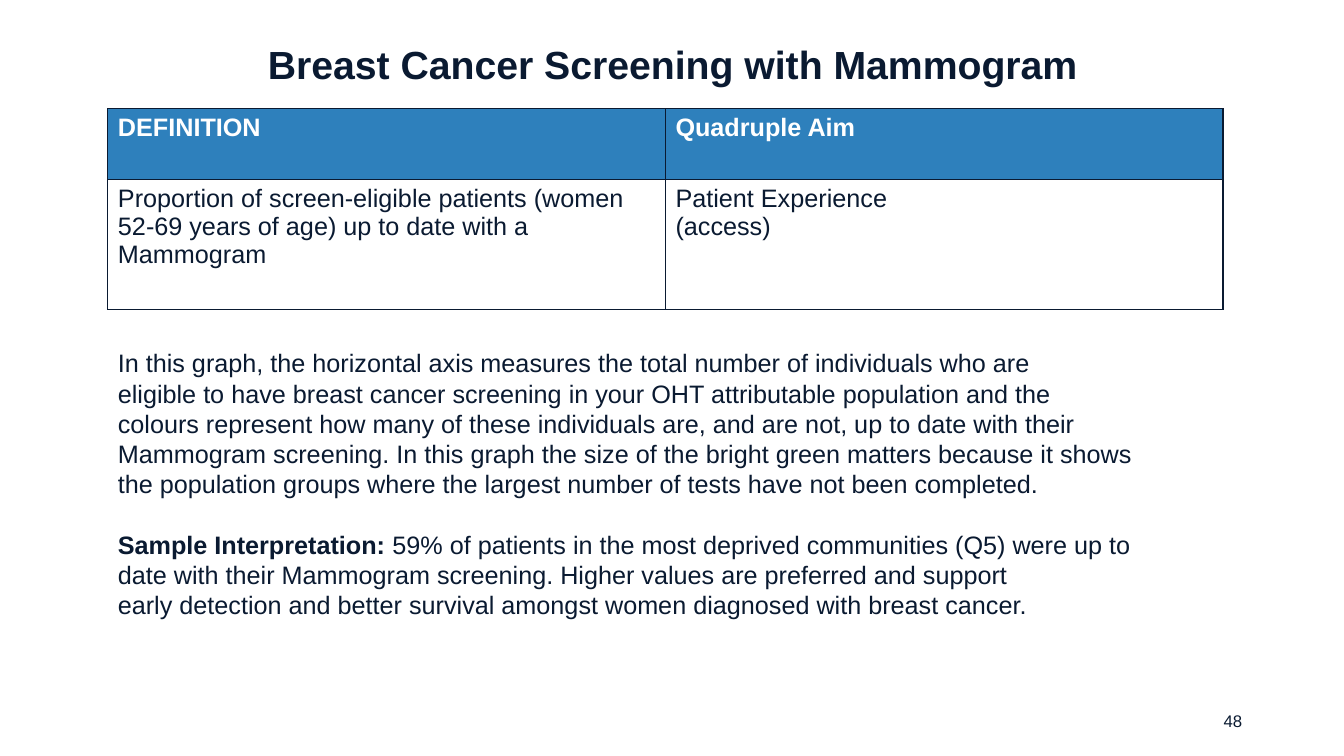
from lxml import etree
from pptx import Presentation
from pptx.dml.color import RGBColor
from pptx.enum import text
from pptx.oxml import ns
from pptx.util import Inches, Pt

# Content
TITLE = "Breast Cancer Screening with Mammogram"
PAGE_NUMBER = "48"
TABLE_ROWS = [
    ("DEFINITION", "Quadruple Aim"),
    ("Proportion of screen-eligible patients (women 52-69 years of age) "
     "up to date with a Mammogram", "Patient Experience\n(access)"),
]
# Each paragraph is a list of (wording, bold) runs; ~ marks a no-break space
NO_BREAK_SPACE = chr(160)
EXPLANATION = [
    [("In this graph, the horizontal axis measures the total number of individuals who are "
      "eligible~to have breast cancer screening in your OHT attributable population and the "
      "colours~represent how~many of these individuals~are, and~are not, up to date with their "
      "Mammogram screening. In~this graph the size of the~bright green matters because it shows "
      "the population groups~where the~largest number of tests have not been completed.", False)],
    [("Sample Interpretation: ", True),
     ("59% of patients in the most deprived communities (Q5) were up to date with their "
      "Mammogram screening.~Higher values are preferred and support early~detection and "
      "better survival amongst women diagnosed with breast cancer.", False)],
]

# Style and layout
FONT = "Arial"
NAVY = RGBColor(0x0A, 0x1A, 0x31)
BLUE = RGBColor(0x2E, 0x80, 0xBC)
WHITE = RGBColor(0xFF, 0xFF, 0xFF)
LEFT = 1.07
COLUMN_WIDTH = 5.53
ROW_HEIGHTS = [0.7, 1.29]


def style(paragraph, size, color=NAVY, bold=None):
    font = paragraph.font
    font.name, font.size, font.bold = FONT, Pt(size), bold
    font.color.rgb = color


def add_text_box(slide, left, top, width, height, anchor):
    box = slide.shapes.add_textbox(*map(Inches, (left, top, width, height)))
    frame = box.text_frame
    frame.word_wrap = True
    frame.vertical_anchor = anchor
    return frame


def add_borders(cell, color):
    properties = cell._tc.get_or_add_tcPr()
    for position, side in enumerate(("a:lnL", "a:lnR", "a:lnT", "a:lnB")):
        line = etree.Element(ns.qn(side), w=str(Pt(1)))
        fill = etree.SubElement(line, ns.qn("a:solidFill"))
        etree.SubElement(fill, ns.qn("a:srgbClr"), val=str(color))
        properties.insert(position, line)


presentation = Presentation()
presentation.slide_width = Inches(13.33)
presentation.slide_height = Inches(7.5)
slide = presentation.slides.add_slide(presentation.slide_layouts[6])

# Title
title = add_text_box(slide, 0.77, 0.24, 11.8, 0.84, text.MSO_ANCHOR.MIDDLE).paragraphs[0]
title.text = TITLE
title.alignment = text.PP_ALIGN.CENTER
title.line_spacing = 0.9
style(title, 28, bold=True)

# Definition table
table = slide.shapes.add_table(
    len(TABLE_ROWS), 2, Inches(LEFT), Inches(1.08),
    Inches(2 * COLUMN_WIDTH), Inches(sum(ROW_HEIGHTS))).table
for row_index, (row, height) in enumerate(zip(TABLE_ROWS, ROW_HEIGHTS)):
    is_header = row_index == 0
    table.rows[row_index].height = Inches(height)
    for column_index, wording in enumerate(row):
        cell = table.cell(row_index, column_index)
        cell.text = wording
        cell.fill.solid()
        cell.fill.fore_color.rgb = BLUE if is_header else WHITE
        add_borders(cell, NAVY)
        for paragraph in cell.text_frame.paragraphs:
            style(paragraph, 18, WHITE if is_header else NAVY, is_header)

# Explanation
frame = add_text_box(slide, LEFT, 3.4, 10.32, 3.13, text.MSO_ANCHOR.TOP)
for index, runs in enumerate(EXPLANATION):
    paragraph = frame.add_paragraph() if index else frame.paragraphs[0]
    if index:
        paragraph.space_before = Pt(21.6)
    style(paragraph, 18)
    for wording, bold in runs:
        run = paragraph.add_run()
        run.text = wording.replace("~", NO_BREAK_SPACE)
        run.font.bold = bold

# Page number
number = add_text_box(slide, 9.42, 6.95, 3, 0.4, text.MSO_ANCHOR.MIDDLE).paragraphs[0]
number.text = PAGE_NUMBER
number.alignment = text.PP_ALIGN.RIGHT
style(number, 12)

presentation.save("out.pptx")
